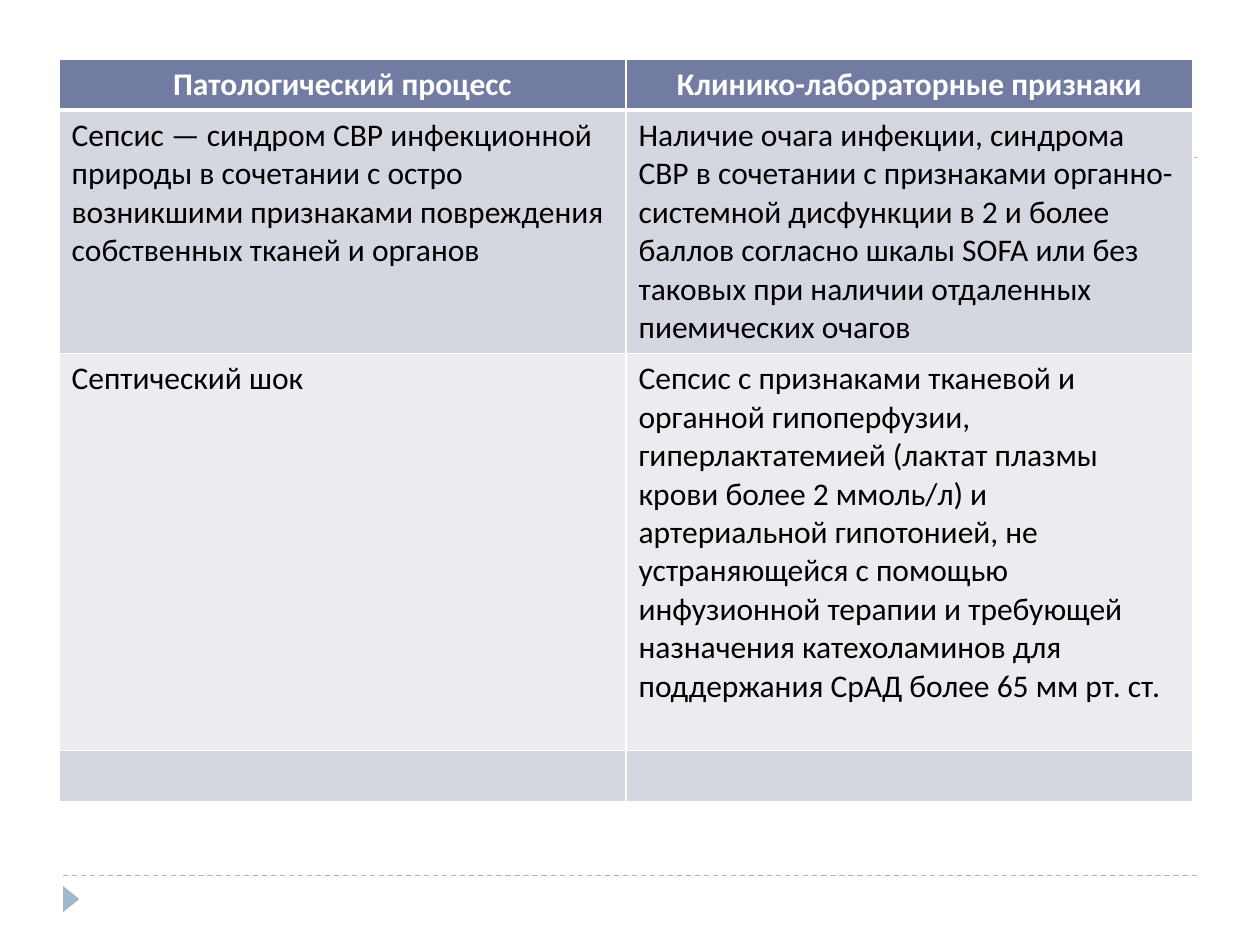
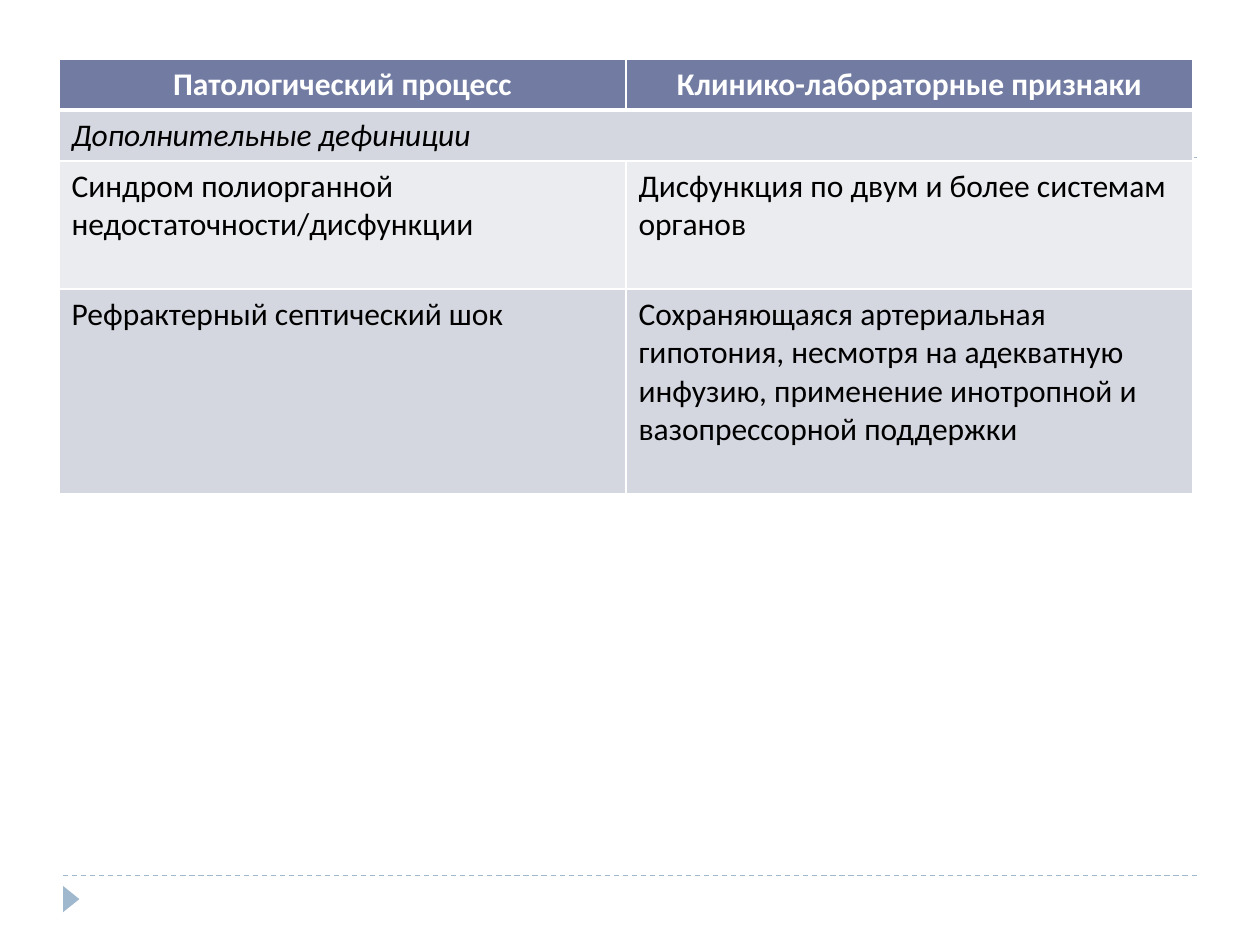
from dataclasses import dataclass

from lxml.etree import SubElement
from pptx import Presentation
from pptx.dml.color import RGBColor
from pptx.enum.dml import MSO_LINE
from pptx.enum.shapes import MSO_CONNECTOR, MSO_SHAPE
from pptx.enum.text import PP_ALIGN
from pptx.oxml.ns import qn
from pptx.util import Cm, Pt


@dataclass(frozen=True)
class Theme:
    font: str = "Calibri"
    text_size: int = 18
    text: str = "000000"
    light: str = "FFFFFF"
    header: str = "727CA3"
    bands: tuple = ("D5D7E0", "EBECF0")
    accent: str = "9FB8CD"
    rule_width: float = 0.75
    border: int = 1
    header_border: int = 3


THEME = Theme()
TABLE_LEFT = TABLE_TOP = 1.19
COLUMN_WIDTH = 11.43
LINE_HEIGHT = 0.775
CELL_PADDING = 0.25

HEADINGS = ("Патологический процесс", "Клинико-лабораторные признаки")

# Each row: its cell texts and its height in lines of text
SEPSIS_ROWS = [
    (("Сепсис — синдром СВР инфекционной природы в сочетании с остро "
      "возникшими признаками повреждения собственных тканей и органов",
      "Наличие очага инфекции, синдрома СВР в сочетании с признаками "
      "органно-системной дисфункции в 2 и более баллов согласно шкалы SOFA "
      "или без таковых при наличии отдаленных пиемических очагов"), 6),
    (("Септический шок",
      "Сепсис с признаками тканевой и органной гипоперфузии, "
      "гиперлактатемией (лактат плазмы крови более 2 ммоль/л) и "
      "артериальной гипотонией, не устраняющейся с помощью инфузионной "
      "терапии и требующей назначения катехоламинов для поддержания СрАД "
      "более 65 мм рт. ст."), 10),
    (("", ""), 1),
]
EXTRA_ROWS = [
    (("Дополнительные дефиниции",), 1),
    (("Синдром полиорганной недостаточности/дисфункции",
      "Дисфункция по двум и более системам органов"), 3),
    (("Рефрактерный септический шок",
      "Сохраняющаяся артериальная гипотония, несмотря на адекватную инфузию, "
      "применение инотропной и вазопрессорной поддержки"), 5),
]


def rgb(color):
    return RGBColor.from_string(color)


def add_dashed_rule(page, top):
    rule = page.shapes.add_connector(
        MSO_CONNECTOR.STRAIGHT, Cm(1.27), Cm(top), Cm(24.13), Cm(top))
    rule.line.color.rgb = rgb(THEME.accent)
    rule.line.width = Pt(THEME.rule_width)
    rule.line.dash_style = MSO_LINE.DASH
    SubElement(rule._element.spPr, qn("a:effectLst"))


def add_corner_triangle(page):
    triangle = page.shapes.add_shape(
        MSO_SHAPE.ISOSCELES_TRIANGLE, Cm(1.17), Cm(17.96), Cm(0.53), Cm(0.33))
    triangle.rotation = 90
    triangle.shadow.inherit = False
    triangle.fill.solid()
    triangle.fill.fore_color.rgb = rgb(THEME.accent)
    triangle.line.fill.background()


def set_borders(cell, top, bottom):
    properties = cell._tc.get_or_add_tcPr()
    widths = {"lnL": THEME.border, "lnR": THEME.border, "lnT": top, "lnB": bottom}
    for side, width in widths.items():
        line = SubElement(properties, qn(f"a:{side}"), w=str(Pt(width)))
        fill = SubElement(line, qn("a:solidFill"))
        SubElement(fill, qn("a:srgbClr"), val=THEME.light)


def write_cell(cell, text, color, bold=False, italic=False, align=PP_ALIGN.LEFT):
    para = cell.text_frame.paragraphs[0]
    para.alignment = align
    para.font.size = Pt(THEME.text_size)
    if not text:
        return
    span = para.add_run()
    span.text = text
    span.font.name = THEME.font
    span.font.size = Pt(THEME.text_size)
    span.font.bold = bold
    span.font.italic = italic
    span.font.color.rgb = rgb(color)


def style_row(cells, row_index):
    """Give a table row its borders and its header or band fill."""
    top = THEME.header_border if row_index == 1 else THEME.border
    bottom = THEME.header_border if row_index == 0 else THEME.border
    band = THEME.bands[(row_index - 1) % len(THEME.bands)]
    for cell in cells:
        set_borders(cell, top, bottom)
        cell.fill.solid()
        cell.fill.fore_color.rgb = rgb(band if row_index else THEME.header)


def add_definition_table(page, body_rows):
    """Draw the headed table; a row with a single text spans all columns."""
    rows = [(HEADINGS, 1), *body_rows]
    heights = [Cm(lines * LINE_HEIGHT + CELL_PADDING) for _, lines in rows]
    columns = len(HEADINGS)
    table = page.shapes.add_table(
        len(rows), columns, Cm(TABLE_LEFT), Cm(TABLE_TOP),
        Cm(columns * COLUMN_WIDTH), sum(heights)).table
    for column in table.columns:
        column.width = Cm(COLUMN_WIDTH)
    for index, (texts, _) in enumerate(rows):
        table.rows[index].height = heights[index]
        cells = [table.cell(index, column) for column in range(columns)]
        style_row(cells, index)
        spans_row = len(texts) < columns
        if spans_row:
            cells[0].merge(cells[-1])
        for cell, text in zip(cells, texts):
            if index == 0:
                write_cell(cell, text, THEME.light, bold=True, align=PP_ALIGN.CENTER)
            else:
                write_cell(cell, text, THEME.text, italic=spans_row)


def add_definition_page(deck, body_rows):
    page = deck.slides.add_slide(deck.slide_layouts[6])
    for top in (17.65, 3.18):
        add_dashed_rule(page, top)
    add_corner_triangle(page)
    add_definition_table(page, body_rows)


def main():
    deck = Presentation()
    deck.slide_width = Cm(25.4)
    deck.slide_height = Cm(19.05)
    for body_rows in (SEPSIS_ROWS, EXTRA_ROWS):
        add_definition_page(deck, body_rows)
    deck.save("out.pptx")


if __name__ == "__main__":
    main()
